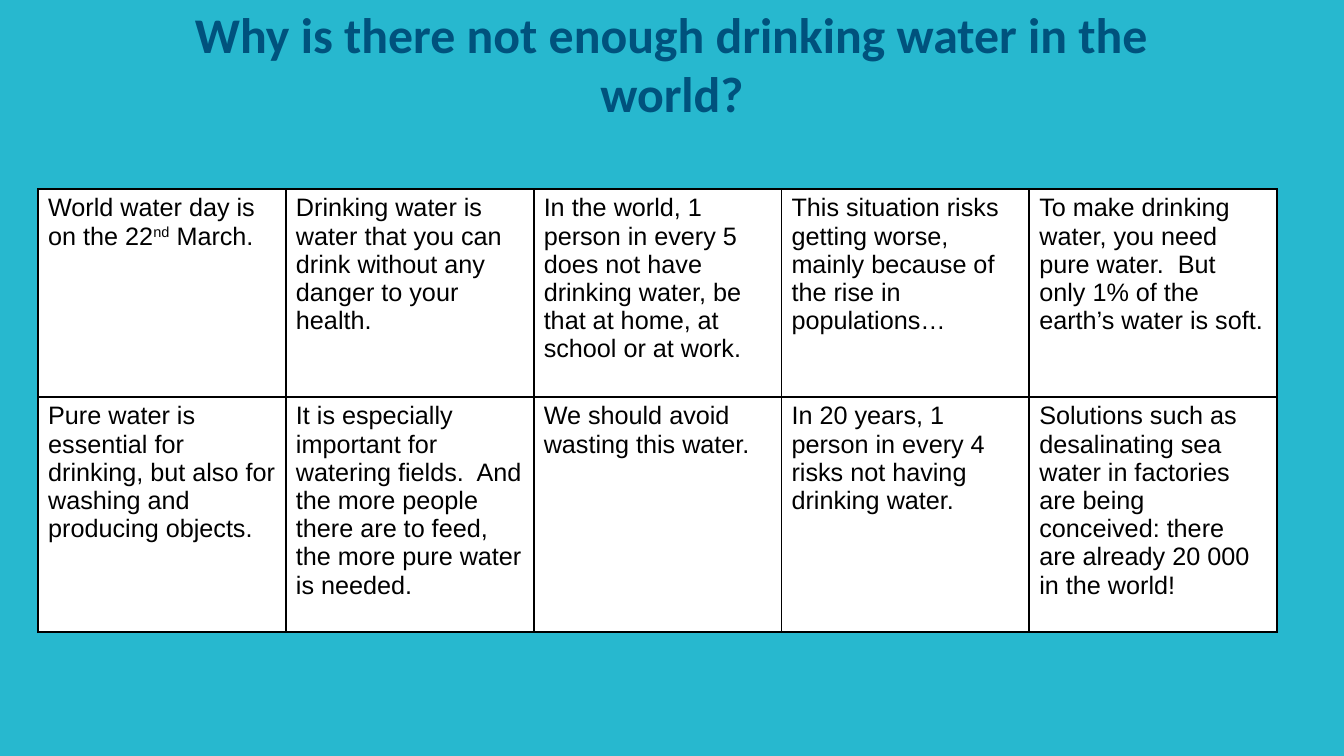
import pptx
import pptx.util
import pptx.dml.color
import pptx.enum.text
import pptx.oxml
import pptx.oxml.ns
from dataclasses import dataclass

Pt = pptx.util.Pt
Rgb = pptx.dml.color.RGBColor.from_string
Align = pptx.enum.text.PP_ALIGN
Anchor = pptx.enum.text.MSO_ANCHOR


@dataclass(frozen=True)
class Theme:
    back: str = "27B8CF"
    title: str = "00527D"
    ink: str = "000000"
    paper: str = "FFFFFF"
    head: str = "Calibri"
    body: str = "Arial"
    big: float = 35.6
    small: float = 18
    rule: float = 1.5


THEME = Theme()

TITLE = "Why is there not enough drinking water in the world?"
# A caret pair marks superscript
FACTS = [
    [
        "World water day is on the 22^nd^ March.",
        "Drinking water is water that you can drink without any danger to your health.",
        "In the world, 1 person in every 5 does not have drinking water, "
        "be that at home, at school or at work.",
        "This situation risks getting worse, mainly because of the rise in populations…",
        "To make drinking water, you need pure water.  "
        "But only 1% of the earth’s water is soft.",
    ],
    [
        "Pure water is essential for drinking, but also for washing and producing objects.",
        "It is especially important for watering fields.  And the more people "
        "there are to feed, the more pure water is needed.",
        "We should avoid wasting this water.",
        "In 20 years, 1 person in every 4 risks not having drinking water.",
        "Solutions such as desalinating sea water in factories are being "
        "conceived: there are already 20 000 in the world!",
    ],
]


def write(frame, text, font=THEME.body, size=THEME.small, color=THEME.ink,
          bold=False, align=Align.LEFT):
    frame.word_wrap = True
    para = frame.paragraphs[0]
    para.alignment = align
    for i, part in enumerate(text.split("^")):
        run = para.add_run()
        run.text = part
        run.font.name = font
        run.font.size = Pt(size)
        run.font.bold = bold
        run.font.color.rgb = Rgb(color)
        if i % 2:
            run.font._element.set("baseline", "30000")


def border(cell):
    # Borders must come before the fill in the cell properties
    props = cell._tc.get_or_add_tcPr()
    for i, side in enumerate(("lnL", "lnR", "lnT", "lnB")):
        line = pptx.oxml.parse_xml(
            f'<a:{side} {pptx.oxml.ns.nsdecls("a")} w="{Pt(THEME.rule)}">'
            f'<a:solidFill><a:srgbClr val="{THEME.ink}"/></a:solidFill></a:{side}>')
        props.insert(i, line)


def heading(slide, left, top, width, height):
    box = slide.shapes.add_textbox(Pt(left), Pt(top), Pt(width), Pt(height))
    frame = box.text_frame
    frame.vertical_anchor = Anchor.MIDDLE
    write(frame, TITLE, font=THEME.head, size=THEME.big, color=THEME.title,
          bold=True, align=Align.CENTER)


def grid(slide, left, top, width, heights):
    count = len(FACTS[0])
    table = slide.shapes.add_table(
        len(FACTS), count, Pt(left), Pt(top), Pt(width), Pt(sum(heights))).table
    table.first_row = table.horz_banding = False
    for col in table.columns:
        col.width = Pt(width / count)
    for r, row in enumerate(FACTS):
        table.rows[r].height = Pt(heights[r])
        for c, fact in enumerate(row):
            cell = table.cell(r, c)
            cell.fill.solid()
            cell.fill.fore_color.rgb = Rgb(THEME.paper)
            border(cell)
            write(cell.text_frame, fact)


def main():
    deck = pptx.Presentation()
    deck.slide_width, deck.slide_height = Pt(960), Pt(540)
    slide = deck.slides.add_slide(deck.slide_layouts[6])

    # Background
    fill = slide.background.fill
    fill.solid()
    fill.fore_color.rgb = Rgb(THEME.back)

    # Title and fact table
    heading(slide, 124.5, 0, 711, 90)
    grid(slide, 27.2, 135, 885, (148.5, 168))

    deck.save("out.pptx")


if __name__ == "__main__":
    main()
